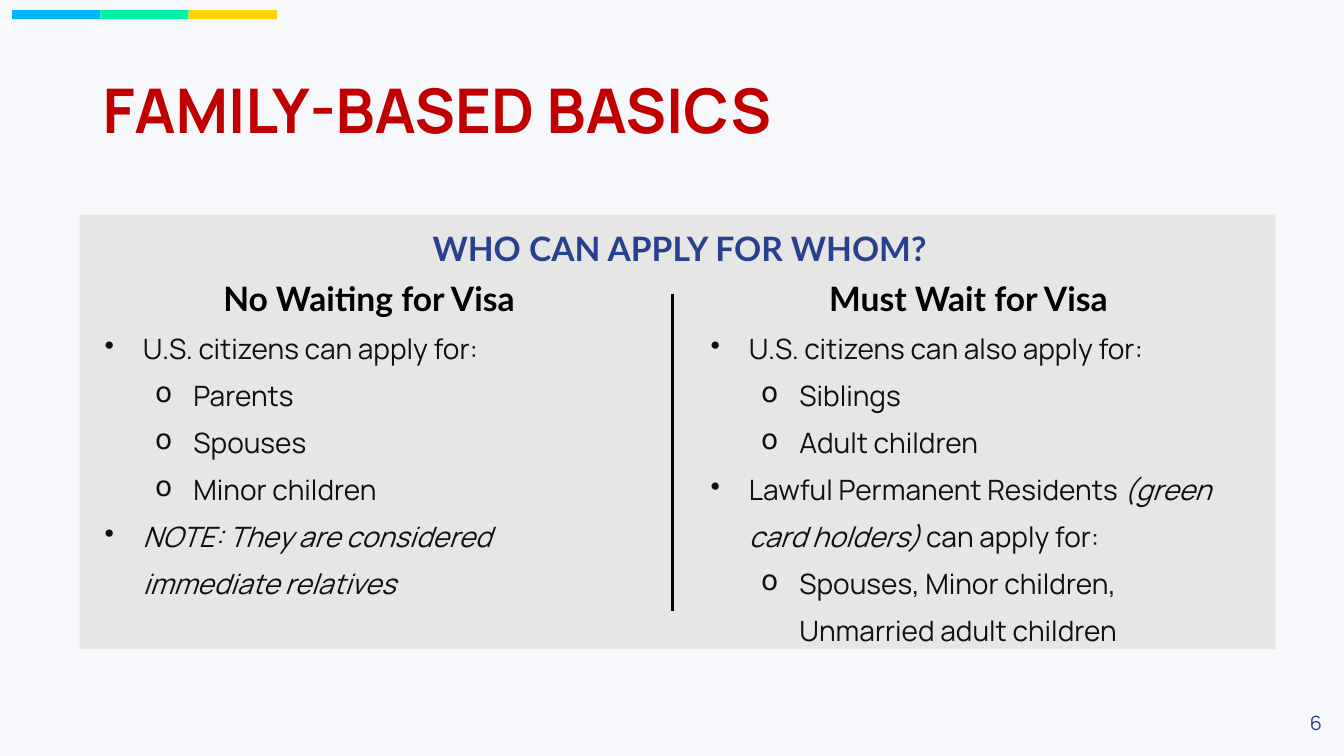
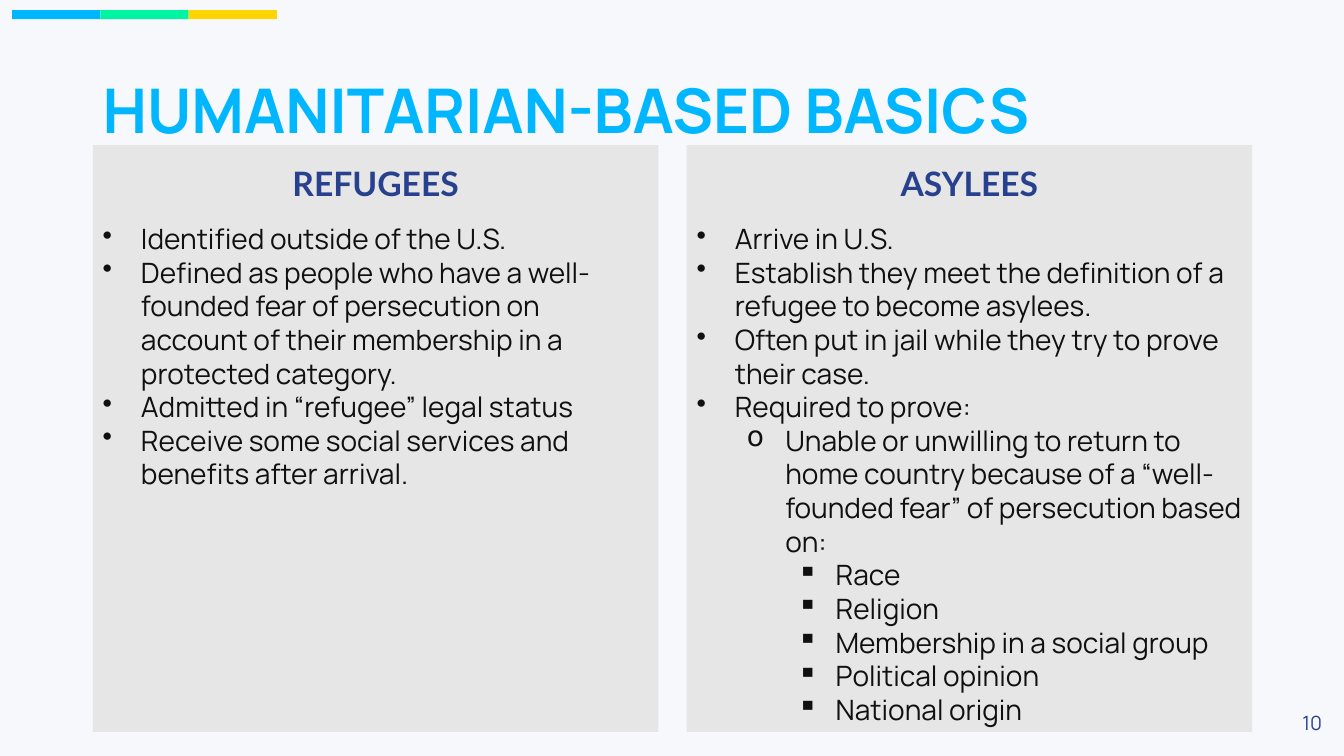
from lxml import etree
from pptx import Presentation
from pptx.dml.color import RGBColor
from pptx.enum import shapes, text
from pptx.oxml import ns
from pptx.util import Inches, Pt

BACKGROUND, PANEL = "F7F8FC", "E6E6E6"
BLUE, GREEN, YELLOW = "00B7FF", "00F5A3", "FFD400"
NAVY, RED, INK, BLACK = "28418E", "C00000", "101010", "000000"
HEADING_FONT, BODY_FONT = "Lato", "Manrope"
BULLETS = "•o▪"
HANGING, LEVEL_STEP = 0.38, 0.5

NO_WAIT_ITEMS = [
    (0, "U.S. citizens can apply for:"),
    (1, "Parents"),
    (1, "Spouses"),
    (1, "Minor children"),
    (0, [("NOTE: They are considered immediate relatives", True)]),
]
MUST_WAIT_ITEMS = [
    (0, "U.S. citizens can also apply for:"),
    (1, "Siblings"),
    (1, "Adult children"),
    (0, [("Lawful Permanent Residents ", False),
         ("(green card holders) ", True),
         ("can apply for:", False)]),
    (1, "Spouses, Minor children, Unmarried adult children"),
]
REFUGEE_ITEMS = [
    (0, "Identified outside of the U.S."),
    (0, "Defined as people who have a well-founded fear of persecution on "
        "account of their membership in a protected category."),
    (0, "Admitted in “refugee” legal status"),
    (0, "Receive some social services and benefits after arrival."),
]
ASYLEE_ITEMS = [
    (0, "Arrive in U.S."),
    (0, "Establish they meet the definition of a refugee to become asylees."),
    (0, "Often put in jail while they try to prove their case."),
    (0, "Required to prove:"),
    (1, "Unable or unwilling to return to home country because of a "
        "“well-founded fear” of persecution based on:"),
    (2, "Race"),
    (2, "Religion"),
    (2, "Membership in a social group"),
    (2, "Political opinion"),
    (2, "National origin"),
]


def rgb(color):
    return RGBColor.from_string(color)


def add_rectangle(slide, left, top, width, height, color):
    shape = slide.shapes.add_shape(
        shapes.MSO_SHAPE.RECTANGLE,
        Inches(left), Inches(top), Inches(width), Inches(height))
    shape.shadow.inherit = False
    shape.fill.solid()
    shape.fill.fore_color.rgb = rgb(color)
    shape.line.fill.background()


def add_frame(slide, left, top, width, height):
    """Add a wrapping text box and return its text frame."""
    box = slide.shapes.add_textbox(
        Inches(left), Inches(top), Inches(width), Inches(height))
    box.text_frame.word_wrap = True
    return box.text_frame


def add_run(paragraph, words, *, size, font=BODY_FONT, color=INK,
            bold=False, italic=False):
    run = paragraph.add_run()
    run.text = words
    run.font.size = Pt(size)
    run.font.name = font
    run.font.color.rgb = rgb(color)
    run.font.bold = bold
    run.font.italic = italic


def add_label(slide, box, words, *, align=text.PP_ALIGN.LEFT,
              anchor=text.MSO_ANCHOR.TOP, line_spacing=1.0, **run_format):
    frame = add_frame(slide, *box)
    frame.vertical_anchor = anchor
    paragraph = frame.paragraphs[0]
    paragraph.alignment = align
    paragraph.line_spacing = line_spacing
    add_run(paragraph, words, **run_format)


def add_heading(slide, left, top, width, words, color=NAVY):
    add_label(slide, (left, top, width, 0.5), words, size=24,
              font=HEADING_FONT, color=color, bold=True,
              align=text.PP_ALIGN.CENTER)


def set_bullet(paragraph, level):
    properties = paragraph._p.get_or_add_pPr()
    properties.set("marL", str(Inches(HANGING + LEVEL_STEP * level)))
    properties.set("indent", str(-Inches(HANGING)))
    bullet_color = etree.SubElement(properties, ns.qn("a:buClr"))
    etree.SubElement(bullet_color, ns.qn("a:srgbClr"), val=INK)
    etree.SubElement(properties, ns.qn("a:buChar"), char=BULLETS[level])


def add_list(slide, box, items, line_spacing=1.0):
    """Add bulleted items: (level, words) or (level, [(words, italic), ...])."""
    frame = add_frame(slide, *box)
    for index, (level, content) in enumerate(items):
        paragraph = frame.add_paragraph() if index else frame.paragraphs[0]
        paragraph.level = level
        set_bullet(paragraph, level)
        paragraph.line_spacing = line_spacing
        runs = [(content, False)] if isinstance(content, str) else content
        for words, italic in runs:
            add_run(paragraph, words, size=20, italic=italic)


def add_vertical_line(slide, x, top, bottom):
    line = slide.shapes.add_connector(
        shapes.MSO_CONNECTOR.STRAIGHT,
        Inches(x), Inches(top), Inches(x), Inches(bottom))
    line.line.color.rgb = rgb(BLACK)
    line.line.width = Pt(1.75)
    etree.SubElement(line._element.spPr, ns.qn("a:effectLst"))


def add_base_slide(presentation, title, title_color, number):
    """Add a slide with the shared background, bars, title and number."""
    slide = presentation.slides.add_slide(presentation.slide_layouts[6])
    slide.background.fill.solid()
    slide.background.fill.fore_color.rgb = rgb(BACKGROUND)
    bar_width = 0.875
    for index, color in enumerate((BLUE, GREEN, YELLOW)):
        add_rectangle(slide, 0.12 + index * bar_width, 0.1, bar_width, 0.09,
                      color)
    add_label(slide, (0.92, 0.4, 11.5, 1.45), title, size=44,
              color=title_color, bold=True, line_spacing=0.9,
              anchor=text.MSO_ANCHOR.MIDDLE)
    add_label(slide, (12.64, 7, 0.57, 0.34), str(number), size=14, color=NAVY,
              align=text.PP_ALIGN.RIGHT)
    return slide


def add_family_slide(presentation):
    slide = add_base_slide(presentation, "FAMILY-BASED BASICS", RED, 6)
    add_rectangle(slide, 0.79, 2.13, 11.86, 4.31, PANEL)
    add_heading(slide, 4.06, 2.21, 5.36, "WHO CAN APPLY FOR WHOM?")
    columns = [
        (0.94, 0.94, 5.44, "No Waiting for Visa", NO_WAIT_ITEMS),
        (6.82, 6.95, 5.57, "Must Wait for Visa", MUST_WAIT_ITEMS),
    ]
    for heading_left, list_left, width, heading, items in columns:
        add_heading(slide, heading_left, 2.71, width, heading, BLACK)
        add_list(slide, (list_left, 3.11, width, 3.27), items, 1.4)
    add_vertical_line(slide, 6.67, 2.92, 6.06)


def add_humanitarian_slide(presentation):
    slide = add_base_slide(presentation, "HUMANITARIAN-BASED BASICS", BLUE, 10)
    top, width, height, gap = 1.44, 5.61, 5.82, 0.28
    columns = [("REFUGEES", REFUGEE_ITEMS), ("ASYLEES", ASYLEE_ITEMS)]
    for index, (heading, items) in enumerate(columns):
        left = 0.92 + index * (width + gap)
        add_rectangle(slide, left, top, width, height, PANEL)
        add_heading(slide, left, top + 0.13, width, heading)
        add_list(slide, (left, top + 0.71, width, height - 0.71), items)


def main():
    presentation = Presentation()
    presentation.slide_width = Inches(13.33)
    presentation.slide_height = Inches(7.5)
    add_family_slide(presentation)
    add_humanitarian_slide(presentation)
    presentation.save("out.pptx")


if __name__ == "__main__":
    main()
